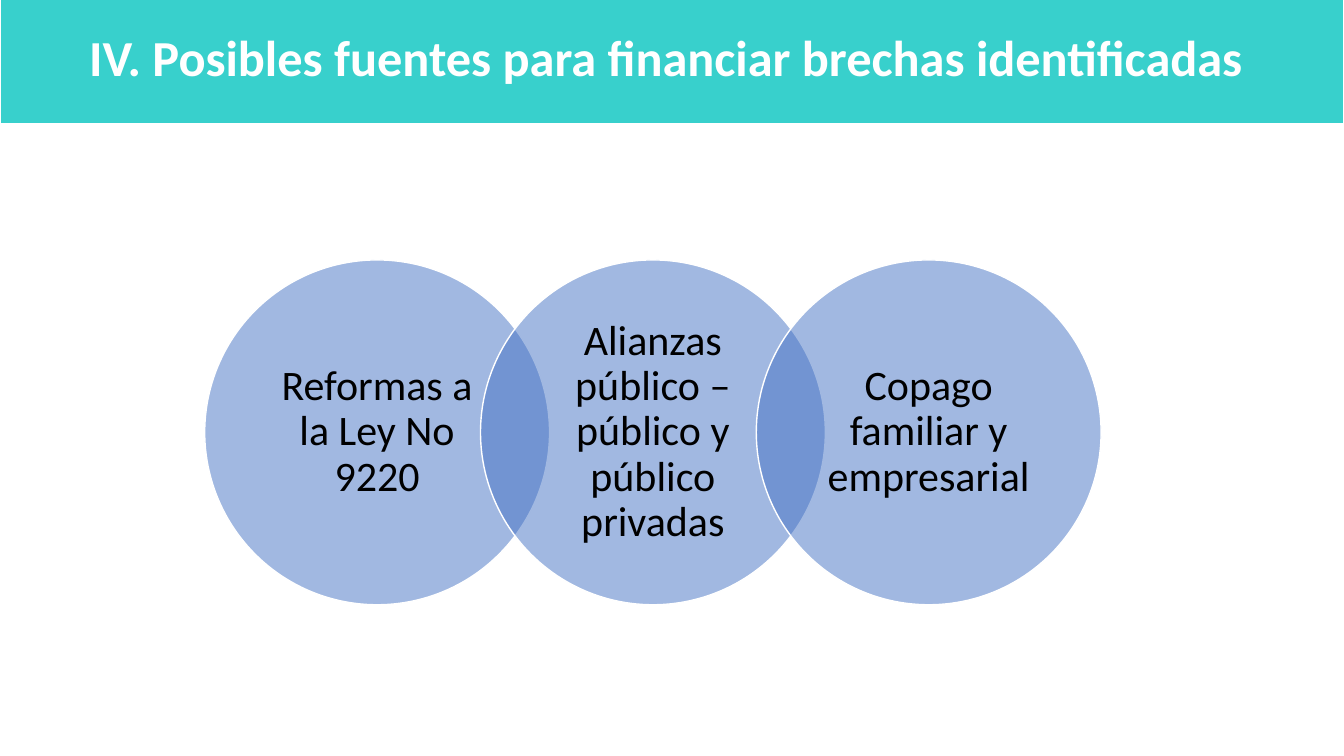
import pptx
import pptx.dml.color
import pptx.enum.shapes
import pptx.enum.text
import pptx.oxml
import pptx.util
import lxml.etree
from pptx.util import Cm

COLORS = {"banner": "38D0CC", "circle": "4472C4", "white": "FFFFFF", "black": "000000"}
SOURCES = [
    "Reformas a la Ley No 9220",
    "Alianzas público – público y público privadas",
    "Copago familiar y empresarial",
]
CIRCLE_LEFT, CIRCLE_TOP, CIRCLE_SIZE, CIRCLE_STEP = 5.16, 6.55, 8.69, 6.95


def rgb(name):
    return pptx.dml.color.RGBColor.from_string(COLORS[name])


def add_text_shape(kind, box, fill, text, font_format):
    """Add a filled, white-edged shape with centred text; box is in centimetres."""
    shape = slide.shapes.add_shape(kind, *[Cm(length) for length in box])
    shape.shadow.inherit = False
    shape.fill.solid()
    shape.fill.fore_color.rgb = rgb(fill)
    shape.line.color.rgb = rgb("white")
    shape.line.width = pptx.util.Pt(1)
    shape.text_frame.word_wrap = True
    shape.text_frame.vertical_anchor = pptx.enum.text.MSO_ANCHOR.MIDDLE
    paragraph = shape.text_frame.paragraphs[0]
    paragraph.alignment = pptx.enum.text.PP_ALIGN.CENTER
    run = paragraph.add_run()
    run.text = text
    run.font.color.rgb = rgb(font_format["color"])
    for name in ("name", "size", "bold"):
        setattr(run.font, name, font_format[name])
    return shape


presentation = pptx.Presentation()
presentation.slide_width = Cm(33.87)
presentation.slide_height = Cm(19.05)
slide = presentation.slides.add_slide(presentation.slide_layouts[6])

title_format = {"name": "Calibri", "size": pptx.util.Pt(36), "bold": True, "color": "white"}
circle_format = {"name": "Calibri", "size": pptx.util.Pt(30), "bold": False, "color": "black"}
circle_margins = {
    "margin_left": Cm(0.48),
    "margin_right": Cm(0.48),
    "margin_top": Cm(0.1),
    "margin_bottom": Cm(0.1),
}

add_text_shape(
    pptx.enum.shapes.MSO_SHAPE.RECTANGLE,
    (0, -0.28, 33.87, 3.4),
    "banner",
    "IV. Posibles fuentes para financiar brechas identificadas ",
    title_format,
)

for index, source in enumerate(SOURCES):
    circle = add_text_shape(
        pptx.enum.shapes.MSO_SHAPE.OVAL,
        (CIRCLE_LEFT + index * CIRCLE_STEP, CIRCLE_TOP, CIRCLE_SIZE, CIRCLE_SIZE),
        "circle",
        source,
        circle_format,
    )
    for name, margin in circle_margins.items():
        setattr(circle.text_frame, name, margin)
    circle.text_frame.paragraphs[0].line_spacing = 0.9
    fill_color = circle.element.spPr.find(pptx.oxml.ns.qn("a:solidFill"))[0]
    lxml.etree.SubElement(fill_color, pptx.oxml.ns.qn("a:alpha"), val="50000")

presentation.save("out.pptx")
